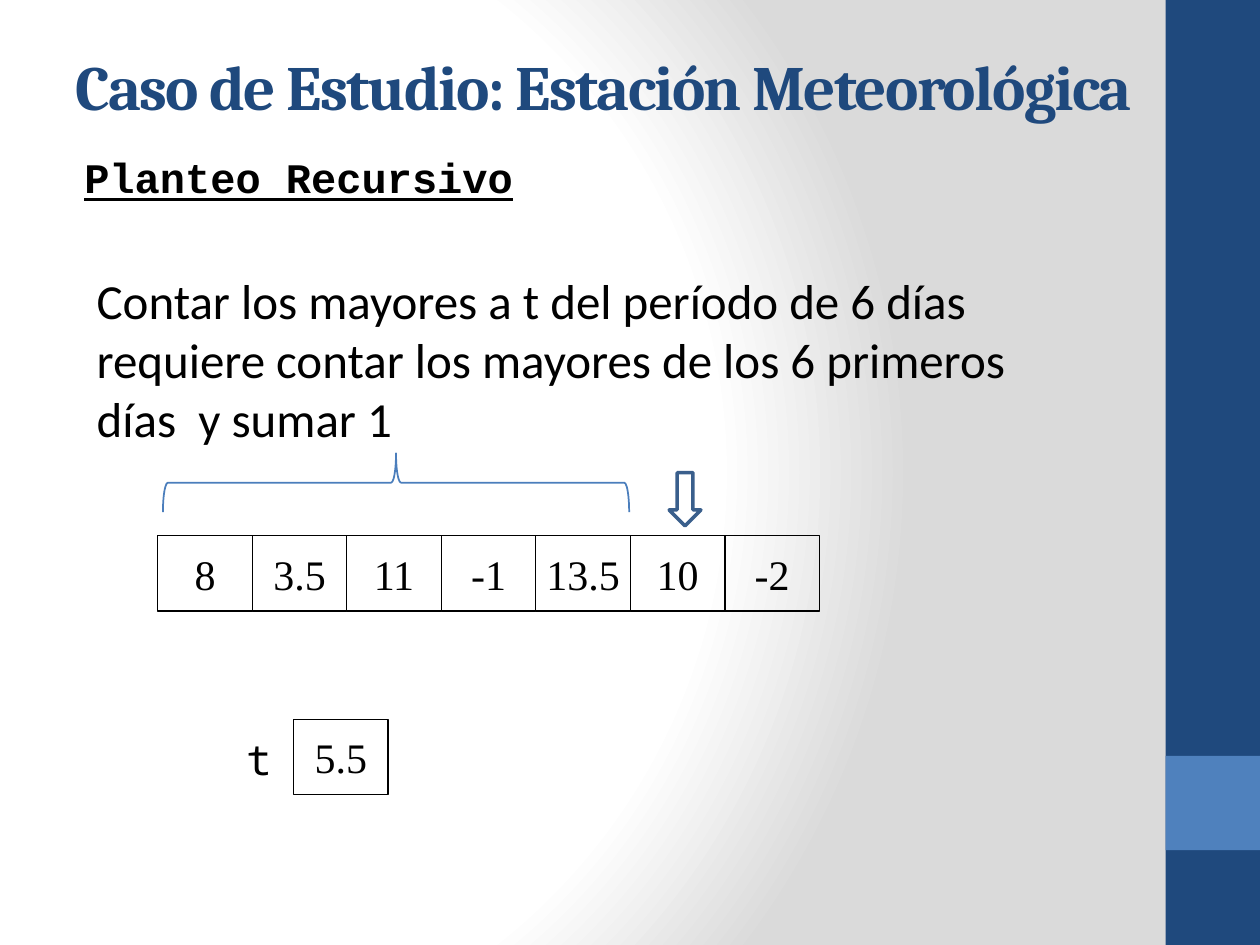
from pptx import Presentation
from pptx.dml.color import RGBColor
from pptx.enum.shapes import MSO_SHAPE as Shape
from pptx.enum.text import MSO_ANCHOR as Anchor, MSO_AUTO_SIZE as AutoSize, PP_ALIGN as Align
from pptx.oxml import parse_xml
from pptx.oxml.ns import nsdecls, qn
from pptx.util import Cm, Pt

NAVY = "1F497D"
BLUE = "4F81BD"
BLACK = "000000"
WHITE = "FFFFFF"
TEMPERATURES = ["8", "3.5", "11", "-1", "13.5", "10", "-2"]
CELL_WIDTH = 13.34 / len(TEMPERATURES)
CELL_HEIGHT = 1.52


def color(value):
    return RGBColor.from_string(value)


def paint_background(slide):
    slide.background.fill.gradient()
    old = slide.element.find(".//" + qn("a:gradFill"))
    stops = "".join(
        f'<a:gs pos="{position * 1000}"><a:srgbClr val="{shade}"/></a:gs>'
        for position, shade in [(0, WHITE), (75, WHITE), (100, "DADADA")]
    )
    gradient = parse_xml(
        f'<a:gradFill rotWithShape="1" {nsdecls("a")}><a:gsLst>{stops}</a:gsLst>'
        '<a:path path="circle">'
        '<a:fillToRect l="20000" t="50000" r="100000" b="50000"/>'
        "</a:path></a:gradFill>"
    )
    old.getparent().replace(old, gradient)


def add_figure(slide, kind, left, top, width, height, fill=None, line=None, weight=1):
    figure = slide.shapes.add_shape(kind, Cm(left), Cm(top), Cm(width), Cm(height))
    figure.shadow.inherit = False
    if fill:
        figure.fill.solid()
        figure.fill.fore_color.rgb = color(fill)
    else:
        figure.fill.background()
    if line:
        figure.line.color.rgb = color(line)
        figure.line.width = Pt(weight)
    else:
        figure.line.fill.background()
    return figure


def add_span(para, text, font, size, ink=BLACK, bold=False, underline=False):
    span = para.add_run()
    span.text = text
    span.font.name = font
    span.font.size = Pt(size)
    span.font.color.rgb = color(ink)
    span.font.bold = bold
    span.font.underline = underline
    return span


def add_cell(slide, left, top, text):
    cell = add_figure(slide, Shape.RECTANGLE, left, top, CELL_WIDTH, CELL_HEIGHT,
                      line=BLACK, weight=0.75)
    frame = cell.text_frame
    frame.word_wrap = False
    frame.vertical_anchor = Anchor.MIDDLE
    para = frame.paragraphs[0]
    para.alignment = Align.CENTER
    add_span(para, text, "Times New Roman", 24)


def add_text(slide, left, top, width, height, text, font, size, **style):
    box = slide.shapes.add_textbox(Cm(left), Cm(top), Cm(width), Cm(height))
    frame = box.text_frame
    frame.word_wrap = True
    frame.auto_size = AutoSize.SHAPE_TO_FIT_TEXT
    return frame, add_span(frame.paragraphs[0], text, font, size, **style)


def add_title(slide, text):
    frame, span = add_text(slide, 1.27, 0.13, 22.8, 3.18, text, "Cambria", 36,
                           ink=NAVY, bold=True)
    frame.auto_size = AutoSize.NONE
    frame.vertical_anchor = Anchor.MIDDLE
    span.font._element.set("spc", "-100")


def main():
    deck = Presentation()
    deck.slide_width, deck.slide_height = Cm(25.4), Cm(19.05)
    slide = deck.slides.add_slide(deck.slide_layouts[6])
    paint_background(slide)

    add_figure(slide, Shape.RECTANGLE, 23.5, 0, 1.9, 19.05, fill=NAVY)
    add_figure(slide, Shape.RECTANGLE, 23.5, 15.24, 1.9, 1.9, fill=BLUE)

    for index, temperature in enumerate(TEMPERATURES):
        add_cell(slide, 3.18 + index * CELL_WIDTH, 10.8, temperature)
    add_text(slide, 4.72, 14.66, 1.22, 1.3, "t", "Noto Sans Mono", 24)
    add_cell(slide, 5.92, 14.5, "5.5")

    add_figure(slide, Shape.DOWN_ARROW, 13.49, 9.53, 0.64, 1.07,
               fill=WHITE, line="3A5F8C", weight=2)
    add_title(slide, "Caso de Estudio: Estación Meteorológica")
    add_text(slide, 1.45, 2.92, 22.07, 1.27, "Planteo Recursivo",
             "Courier New", 24, bold=True, underline=True)
    brace = add_figure(slide, Shape.RIGHT_BRACE, 7.39, 5.03, 1.19, 9.4, line="4B7EBC")
    brace.rotation = 270
    add_text(slide, 1.7, 5.33, 20.19, 3.84,
             "Contar los mayores a t del período de 6 días requiere contar "
             "los mayores de los 6 primeros días  y sumar 1", "Calibri", 28)

    deck.save("out.pptx")


if __name__ == "__main__":
    main()
